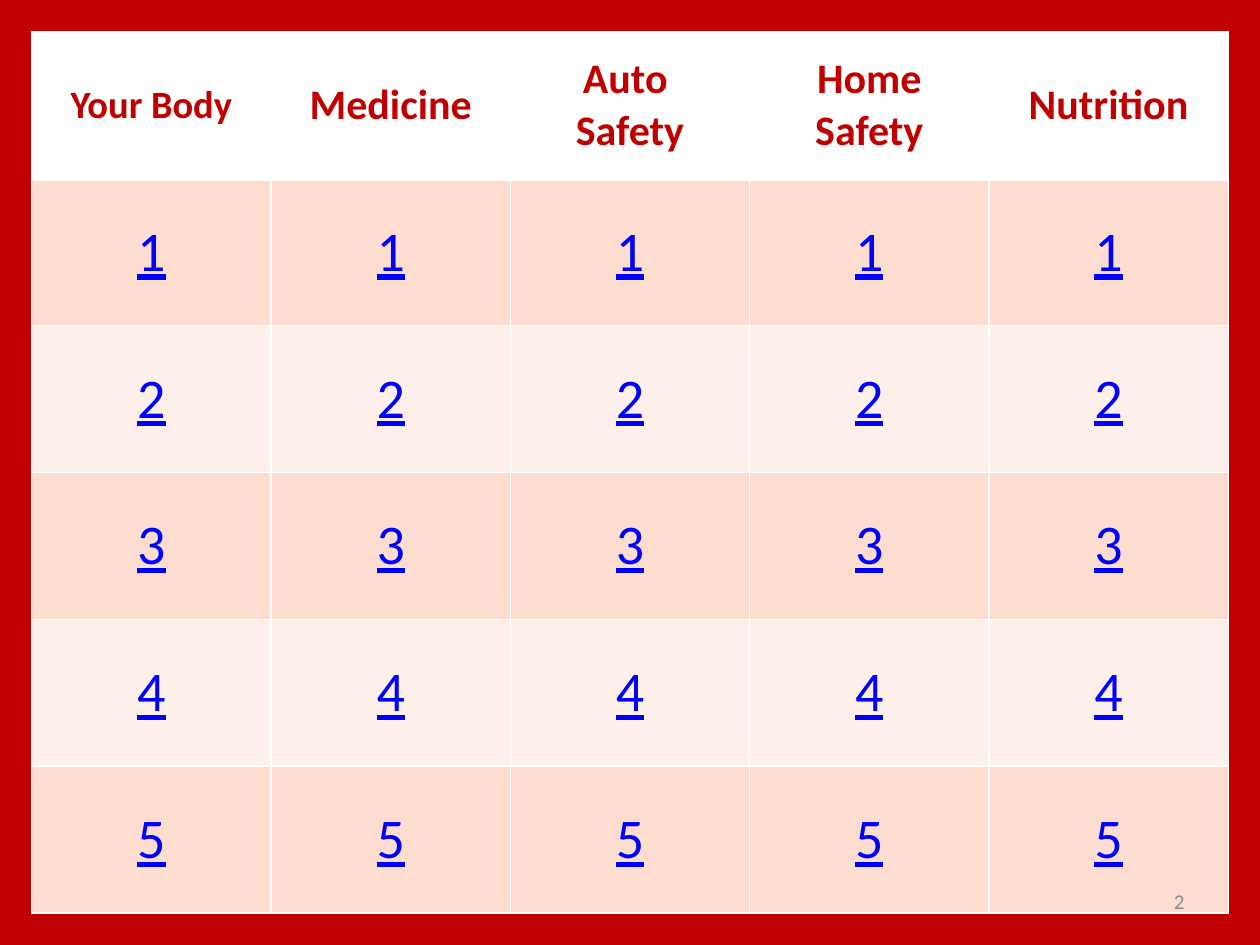
from dataclasses import dataclass

from lxml import etree
from pptx import Presentation
from pptx.dml.color import RGBColor
from pptx.enum.text import MSO_ANCHOR, PP_ALIGN
from pptx.oxml.ns import qn
from pptx.util import Cm, Pt

CENTER = PP_ALIGN.CENTER
RIGHT = PP_ALIGN.RIGHT
MIDDLE = MSO_ANCHOR.MIDDLE

CATEGORIES = [
    (["Your Body"], 22),
    (["Medicine"], 24),
    (["Auto ", "Safety"], 24),
    (["Home Safety"], 24),
    (["Nutrition"], 24),
]
QUESTIONS = ["1", "2", "3", "4", "5"]
SLIDE_NUMBER = "2"


@dataclass(frozen=True)
class Theme:
    font: str = "Calibri"
    red: str = "C00000"
    white: str = "FFFFFF"
    link: str = "0000FF"
    grey: str = "8C8C8C"
    bands: tuple = ("FCDDCF", "FDEFE9")
    question_size: int = 32
    number_size: int = 12
    border: int = 1
    header_border: int = 3


THEME = Theme()
SLIDE_W, SLIDE_H = Cm(25.4), Cm(19.05)
MARGIN = Cm(0.64)
BOARD_W = SLIDE_W - 2 * MARGIN
BOARD_H = SLIDE_H - 2 * MARGIN


def write(tf, lines, size, color, align, bold=False, underline=False):
    for i, line in enumerate(lines):
        p = tf.paragraphs[0] if i == 0 else tf.add_paragraph()
        p.text = line
        p.alignment = align
        font = p.font
        font.name = THEME.font
        font.size = Pt(size)
        font.bold = bold
        font.underline = underline
        font.color.rgb = RGBColor.from_string(color)


def set_borders(cell, top, bottom):
    tcPr = cell._tc.get_or_add_tcPr()
    widths = {"lnL": THEME.border, "lnR": THEME.border, "lnT": top, "lnB": bottom}
    for side, width in widths.items():
        ln = etree.SubElement(tcPr, qn(f"a:{side}"), w=str(Pt(width)))
        fill = etree.SubElement(ln, qn("a:solidFill"))
        etree.SubElement(fill, qn("a:srgbClr"), val=THEME.white)


def style_cell(cell, fill, top, bottom):
    set_borders(cell, top, bottom)
    cell.fill.solid()
    cell.fill.fore_color.rgb = RGBColor.from_string(fill)
    cell.vertical_anchor = MIDDLE


def add_board(s):
    rows, cols = len(QUESTIONS) + 1, len(CATEGORIES)
    table = s.shapes.add_table(rows, cols, MARGIN, MARGIN, BOARD_W, BOARD_H).table
    for col, (lines, size) in enumerate(CATEGORIES):
        header = table.cell(0, col)
        style_cell(header, THEME.white, THEME.border, THEME.header_border)
        write(header.text_frame, lines, size, THEME.red, CENTER, bold=True)
        for row, question in enumerate(QUESTIONS, 1):
            cell = table.cell(row, col)
            top = THEME.header_border if row == 1 else THEME.border
            style_cell(cell, THEME.bands[(row - 1) % 2], top, THEME.border)
            write(cell.text_frame, [question], THEME.question_size, THEME.link,
                  CENTER, underline=True)


def add_slide_number(s):
    sp = s.shapes.add_textbox(Cm(18.2), Cm(17.66), Cm(5.93), Cm(1.01))
    tf = sp.text_frame
    tf.word_wrap = True
    tf.vertical_anchor = MIDDLE
    write(tf, [SLIDE_NUMBER], THEME.number_size, THEME.grey, RIGHT)


def main():
    prs = Presentation()
    prs.slide_width, prs.slide_height = SLIDE_W, SLIDE_H
    s = prs.slides.add_slide(prs.slide_layouts[6])
    s.background.fill.solid()
    s.background.fill.fore_color.rgb = RGBColor.from_string(THEME.red)
    add_board(s)
    add_slide_number(s)
    prs.save("out.pptx")


if __name__ == "__main__":
    main()
